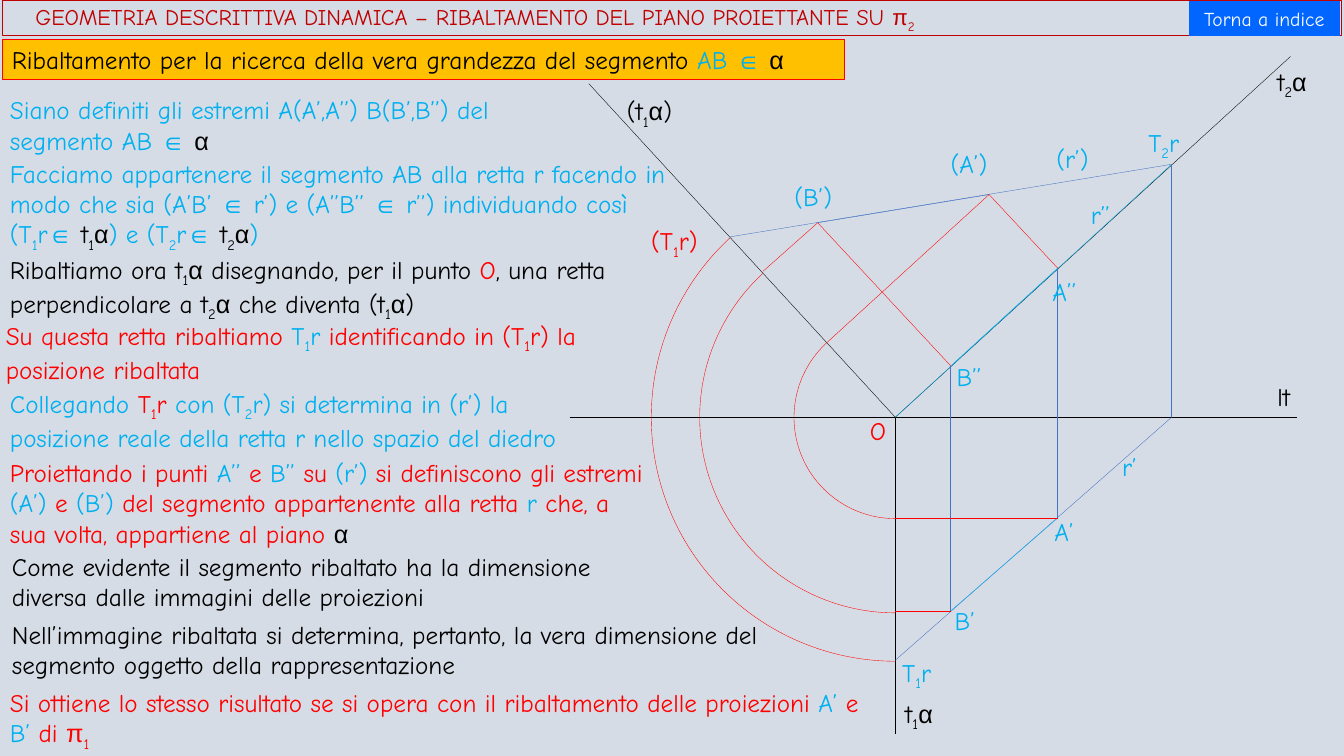
from itertools import groupby

from lxml.etree import SubElement
from pptx import Presentation
from pptx.dml.color import RGBColor
from pptx.enum.shapes import MSO_CONNECTOR as Connector, MSO_SHAPE as Shape
from pptx.enum.text import MSO_ANCHOR as Anchor, MSO_AUTO_SIZE as AutoSize, PP_ALIGN as Align
from pptx.oxml.ns import qn
from pptx.util import Inches, Pt

FONT, SYMBOL_FONT, SYMBOLS = "Comic Neue", "Arial", "απ∈"
BLACK, RED, SKY, BLUE, DARK_RED = "000000", "FF0000", "00B0F0", "4472C4", "C00000"
MARKS = {"k": BLACK, "r": RED, "s": SKY}


def color(hex_code):
    return RGBColor.from_string(hex_code)


def grid(*cells):
    """Turn columns and rows, ten to the inch, into lengths."""
    return [Inches(cell / 10) for cell in cells]


def split_runs(markup, ink):
    """Yield (text, ink, font, subscript); [r] changes ink, _ lowers the next letter."""
    letters = []
    for index, part in enumerate(markup.split("[")):
        if index:
            mark, _, part = part.partition("]")
            ink = MARKS[mark]
        lowered = False
        for letter in part:
            if letter == "_":
                lowered = True
                continue
            font = SYMBOL_FONT if letter in SYMBOLS else FONT
            letters.append((letter, (ink, font, lowered)))
            lowered = False
    for style, group in groupby(letters, key=lambda item: item[1]):
        yield "".join(letter for letter, _ in group), *style


class Board:
    """The current slide and the style of its elements."""

    def __init__(self, presentation, background):
        self.slide = presentation.slides.add_slide(presentation.slide_layouts[6])
        self.slide.background.fill.solid()
        self.slide.background.fill.fore_color.rgb = color(background)

    def label(self, shape, markup, ink, size=18, align=Align.LEFT, anchor=Anchor.TOP):
        """Put marked-up text into a shape and return its text frame."""
        frame = shape.text_frame
        frame.word_wrap = True
        frame.vertical_anchor = anchor
        paragraph = frame.paragraphs[0]
        paragraph.alignment = align
        for text, run_ink, font, lowered in split_runs(markup, ink):
            run = paragraph.add_run()
            run.text = text
            run.font.size = Pt(size)
            run.font.name = font
            run.font.color.rgb = color(run_ink)
            if lowered:
                run.font._element.set("baseline", "-25000")
        return frame

    def text(self, left, top, width, height, markup, ink):
        box = self.slide.shapes.add_textbox(*grid(left, top, width, height))
        self.label(box, markup, ink).auto_size = AutoSize.SHAPE_TO_FIT_TEXT

    def shape(self, kind, left, top, width, height, fill=None, line=None):
        shape = self.slide.shapes.add_shape(kind, *grid(left, top, width, height))
        shape.shadow.inherit = False
        if fill:
            shape.fill.solid()
            shape.fill.fore_color.rgb = color(fill)
        else:
            shape.fill.background()
        if line:
            shape.line.color.rgb = color(line)
            shape.line.width = Pt(0.25)
        else:
            shape.line.fill.background()
        return shape

    def line(self, start, end, ink, width=0.25):
        connector = self.slide.shapes.add_connector(Connector.STRAIGHT, *grid(*start, *end))
        connector.line.color.rgb = color(ink)
        connector.line.width = Pt(width)
        SubElement(connector._element.spPr, qn("a:effectLst"))

    def arc(self, center, radius, start_angle, end_angle):
        left, top = center[0] - radius, center[1] - radius
        arc = self.shape(Shape.ARC, left, top, 2 * radius, 2 * radius, line=RED)
        # an adjustment of 0.6 is one degree
        arc.adjustments[0] = start_angle * 0.6
        arc.adjustments[1] = end_angle * 0.6


ORIGIN = (88.8, 41.4)
T1, T2, T2_FOOT, T_TURNED = (88.8, 65.5), (116.2, 16.3), (116.2, 41.4), (72.4, 23.5)
A1, A2, A_TURNED, A_ON_TRACE = (104.9, 51.4), (104.9, 26.6), (98.1, 19.3), (82, 34)
B1, B2, B_TURNED, B_ON_TRACE = (94.3, 60.6), (94.3, 36.3), (81.1, 22.1), (75.7, 26.9)

LINES = [
    ((56.5, 41.4), (128.6, 41.4), BLACK),
    (ORIGIN, (88.8, 72.8), BLACK),
    ((128, 5.6), ORIGIN, BLACK),
    ((58.4, 8.3), ORIGIN, BLACK),
    (T2, T2_FOOT, BLUE),
    (T2_FOOT, T1, BLUE),
    (T_TURNED, T2, BLUE),
    (T2, ORIGIN, SKY),
    (A2, A1, BLUE),
    (B2, B1, BLUE, 0.5),
    (A1, B1, SKY),
    (A2, B2, SKY),
    (A_TURNED, B_TURNED, BLUE),
]
for first, second, turned, on_trace in ((A1, A2, A_TURNED, A_ON_TRACE),
                                        (B1, B2, B_TURNED, B_ON_TRACE)):
    LINES += [
        ((ORIGIN[0], first[1]), first, RED),
        (turned, second, RED),
        (turned, on_trace, RED),
    ]

LABELS = [
    (88.8, 68.8, "t_1α", BLACK),
    (125.7, 6.1, "t_2α", BLACK),
    (125.7, 37.3, "lt", BLACK),
    (61.2, 9, "(t_1α)", BLACK),
    (88.5, 64.7, "T_1r", SKY),
    (112.9, 12.1, "T_2r", SKY),
    (103.8, 13.7, "(r’)", SKY),
    (107.2, 19.3, "r’’", SKY),
    (110.3, 44.3, "r’", SKY),
    (103.4, 26.9, "A’’", SKY),
    (103.6, 50.7, "A’", SKY),
    (93.3, 14.2, "(A’)", SKY),
    (63.6, 21.9, "(T_1r)", RED),
    (93.9, 35.4, "B’’", SKY),
    (93.7, 59.6, "B’", SKY),
    (77.8, 17.5, "(B’)", SKY),
    (85.3, 40.7, "O", RED),
]

# left, top, width, rows of text, markup, ink
STEPS = [
    (0, 8.9, 56.8, 2, "Siano definiti gli estremi A(A’,A’’) B(B’,B’’) del segmento AB ∈ [k]α", SKY),
    (0, 15.2, 68.3, 3, "Facciamo appartenere il segmento AB alla retta r facendo in modo che sia "
     "(A’B’ ∈ r’) e (A’’B’’ ∈ r’’) individuando così (T_1r∈ [k]t_1α[s]) e (T_2r∈ [k]t_2α[s])", SKY),
    (0, 24.7, 65, 2, "Ribaltiamo ora t_1α disegnando, per il punto [r]O[k], una retta "
     "perpendicolare a t_2α che diventa (t_1α)", BLACK),
    (-0.4, 31.3, 65.7, 2, "Su questa retta ribaltiamo [s]T_1r[r] identificando in (T_1r) la "
     "posizione ribaltata", RED),
    (0, 38, 61.7, 2, "Collegando [r]T_1r[s] con (T_2r) si determina in (r’) la posizione reale "
     "della retta r nello spazio del diedro", SKY),
    (0, 44.9, 65.8, 3, "Proiettando i punti [s]A’’[r] e [s]B’’ [r]su [s](r’) [r]si definiscono gli "
     "estremi [s](A’) [r]e [s](B’) [r]del segmento appartenente alla retta [s]r[r] che, a sua "
     "volta, appartiene al piano [k]α", RED),
    (0.2, 54.2, 61.6, 2, "Come evidente il segmento ribaltato ha la dimensione diversa dalle "
     "immagini delle proiezioni", BLACK),
    (0.2, 60.9, 82.2, 2, "Nell’immagine ribaltata si determina, pertanto, la vera dimensione del "
     "segmento oggetto della rappresentazione", BLACK),
    (0, 67.7, 87.2, 2, "Si ottiene lo stesso risultato se si opera con il ribaltamento delle "
     "proiezioni [s]A’[r] e [s]B’ [r]di π_1", RED),
]


def main():
    presentation = Presentation()
    presentation.slide_width, presentation.slide_height = Inches(13.33), Inches(7.5)
    board = Board(presentation, "D6DCE5")

    header = board.shape(Shape.RECTANGLE, 0.2, 0, 132.8, 3.5, line=DARK_RED)
    frame = board.label(header, "GEOMETRIA DESCRITTIVA DINAMICA – RIBALTAMENTO DEL PIANO "
                        "PROIETTANTE SU π_2", DARK_RED, 16, anchor=Anchor.MIDDLE)
    frame.margin_left = Inches(0.33)
    frame.paragraphs[0].line_spacing = 0.9

    for line in LINES:
        board.line(*line)
    for radius in (24.2, 19.4, 10.05):
        board.arc(ORIGIN, radius, 90, 227.3)
    for left, top, markup, ink in LABELS:
        board.text(left, top, 7.5, 4, markup, ink)

    banner = board.shape(Shape.RECTANGLE, 0.2, 3.9, 83.5, 4, "FFC000", RED)
    board.label(banner, "Ribaltamento per la ricerca della vera grandezza del segmento "
                "[s]AB ∈ [k]α", BLACK)
    for left, top, width, rows, markup, ink in STEPS:
        board.text(left, top, width, 1 + 3 * rows, markup, ink)

    button = board.shape(Shape.ACTION_BUTTON_CUSTOM, 117.9, 0.1, 15, 3.5, "0066FF")
    board.label(button, "Torna a indice", "FFFFFF", 14, Align.CENTER, Anchor.MIDDLE)
    presentation.save("out.pptx")


if __name__ == "__main__":
    main()
